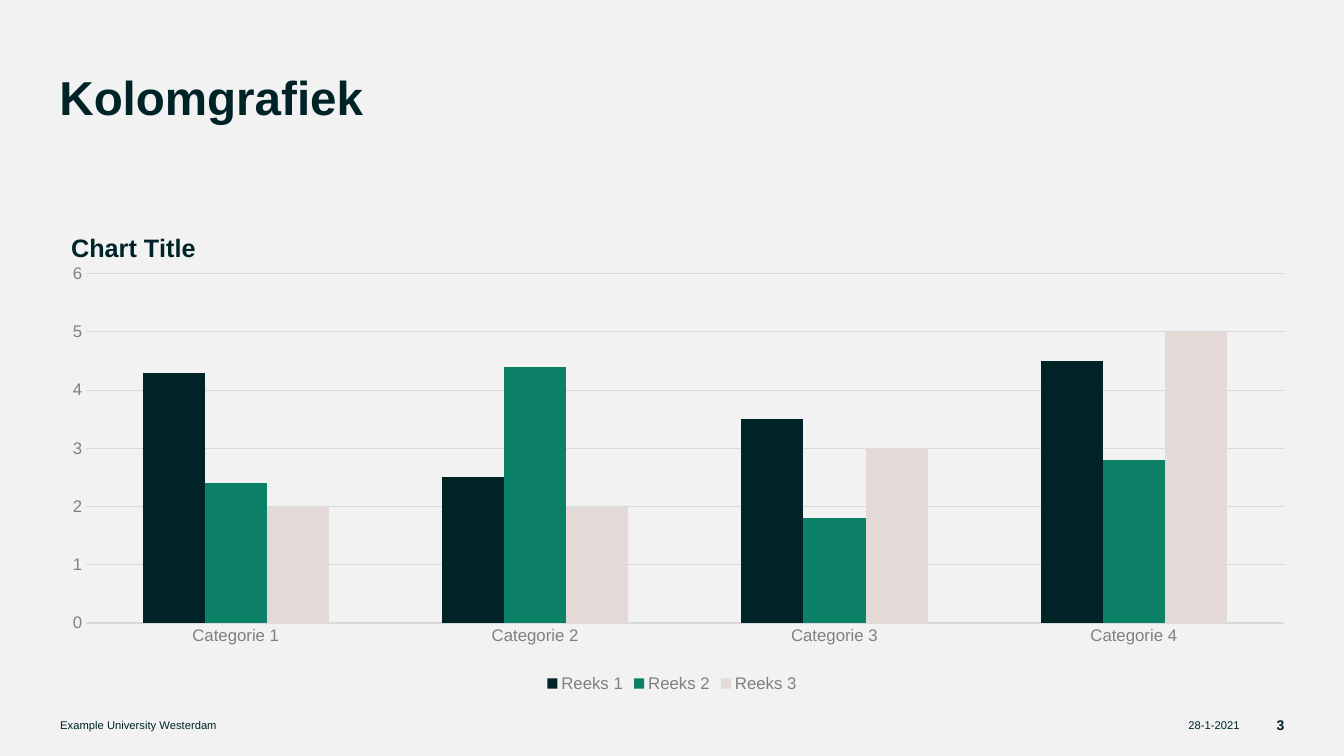
"""Build a slide with a clustered column chart, a title and a footer."""
from lxml import etree
from pptx import Presentation
from pptx.chart.data import CategoryChartData
from pptx.dml.color import RGBColor
from pptx.enum.chart import XL_CHART_TYPE, XL_LEGEND_POSITION, XL_TICK_MARK
from pptx.enum.text import MSO_ANCHOR, PP_ALIGN
from pptx.oxml.ns import qn
from pptx.util import Pt

COLORS = {"back": "F2F2F2", "dark": "002328", "green": "0C8066",
          "sand": "E3DAD8", "label": "808080", "grid": "D9D9D9"}


def style(font, size, color, bold=False):
    font.name, font.size, font.bold = "Arial", Pt(size), bold
    font.color.rgb = RGBColor.from_string(COLORS[color])


def place(parent, index, **parts):
    old = parent.find(qn("c:layout"))
    if old is not None:
        parent.remove(old)
    layout = etree.Element(qn("c:layout"))
    manual = etree.SubElement(layout, qn("c:manualLayout"))
    for name, value in parts.items():
        etree.SubElement(manual, qn("c:" + name)).set("val", str(value))
    parent.insert(index, layout)


deck = Presentation()
deck.slide_width, deck.slide_height = Pt(960), Pt(540)
slide = deck.slides.add_slide(deck.slide_layouts[6])
slide.background.fill.solid()
slide.background.fill.fore_color.rgb = RGBColor.from_string(COLORS["back"])

texts = [
    ("Kolomgrafiek", 42.5, 57, 875, 56, 34, True, PP_ALIGN.LEFT),
    ("Example University Westerdam", 43, 512.6, 777, 10, 8, False, PP_ALIGN.LEFT),
    ("28-1-2021", 831, 512.6, 54.5, 10, 8, False, PP_ALIGN.RIGHT),
    ("3", 896.4, 512.6, 21, 10, 10, True, PP_ALIGN.RIGHT),
]
for text, left, top, width, height, size, bold, align in texts:
    box = slide.shapes.add_textbox(Pt(left), Pt(top), Pt(width), Pt(height))
    frame = box.text_frame
    frame.word_wrap = True
    frame.margin_left = frame.margin_right = 0
    frame.margin_top = frame.margin_bottom = 0
    frame.vertical_anchor = MSO_ANCHOR.TOP if size > 30 else MSO_ANCHOR.MIDDLE
    para = frame.paragraphs[0]
    para.text, para.alignment = text, align
    style(para.font, size, "dark", bold)
    if size > 30:
        para.line_spacing = Pt(32)

data = CategoryChartData()
data.categories = [f"Categorie {n}" for n in range(1, 5)]
data.add_series("Reeks 1", (4.3, 2.5, 3.5, 4.5))
data.add_series("Reeks 2", (2.4, 4.4, 1.8, 2.8))
data.add_series("Reeks 3", (2, 2, 3, 5))
chart = slide.shapes.add_chart(XL_CHART_TYPE.COLUMN_CLUSTERED, Pt(43.2), Pt(154.8),
                               Pt(874), Pt(342.7), data).chart
style(chart.font, 12, "label")

chart.has_title = True
title = chart.chart_title
title.include_in_layout = False
para = title.text_frame.paragraphs[0]
para.text = "Chart Title"
style(para.font, 18, "dark", True)
place(title._element, 1, xMode="edge", yMode="edge", x=0.005, y=0.02)
place(chart._chartSpace.chart.plotArea, 0, layoutTarget="inner", xMode="edge",
      yMode="edge", x=0.021, y=0.119, w=0.979, h=0.728)

plot = chart.plots[0]
plot.gap_width, plot.overlap, plot.vary_by_categories = 182, 0, False
for series, color in zip(plot.series, ("dark", "green", "sand")):
    series.format.fill.solid()
    series.format.fill.fore_color.rgb = RGBColor.from_string(COLORS[color])

values, names = chart.value_axis, chart.category_axis
for axis in (values, names):
    axis.major_tick_mark = axis.minor_tick_mark = XL_TICK_MARK.NONE
    style(axis.tick_labels.font, 12, "label")
values.minimum_scale, values.maximum_scale, values.major_unit = 0, 6, 1
values.has_major_gridlines = True
values.format.line.fill.background()
for line in (values.major_gridlines.format.line, names.format.line):
    line.width = Pt(0.75)
    line.color.rgb = RGBColor.from_string(COLORS["grid"])

chart.has_legend = True
chart.legend.position = XL_LEGEND_POSITION.BOTTOM
chart.legend.include_in_layout = False
style(chart.legend.font, 12, "label")

deck.save("out.pptx")
